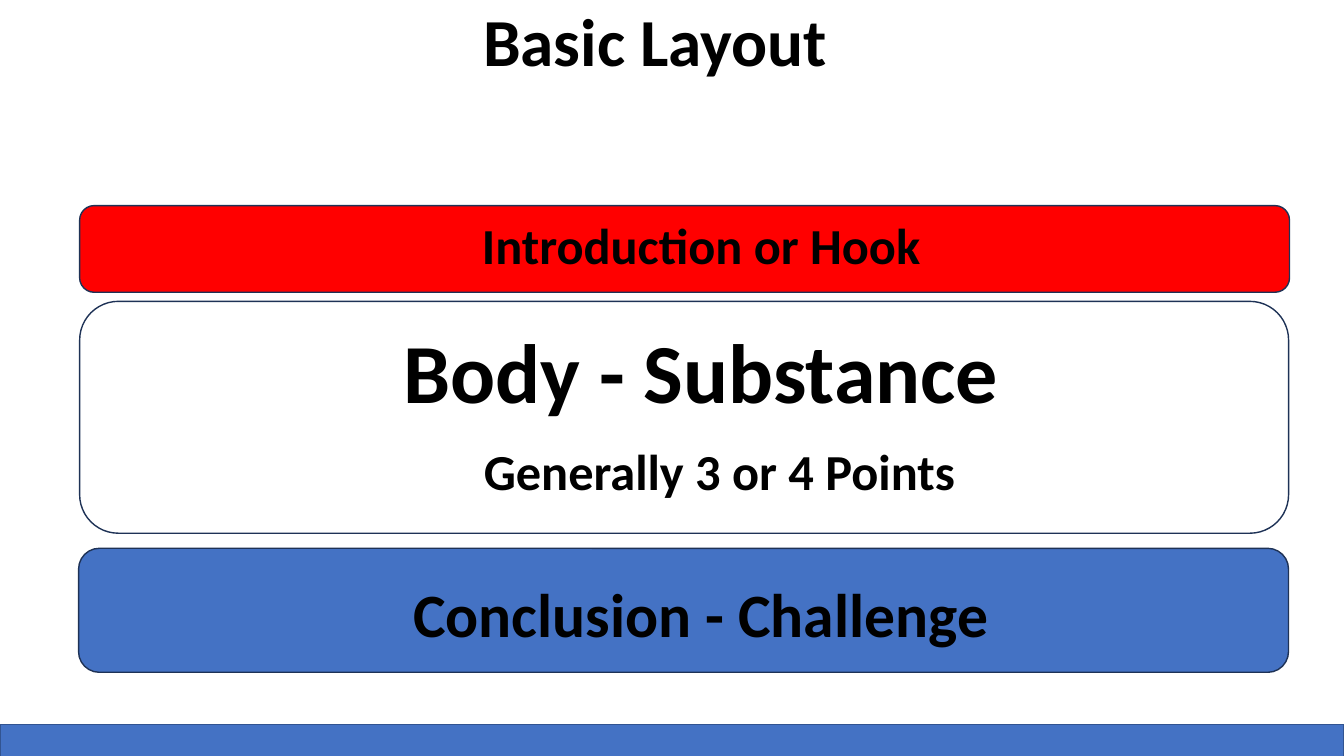
from dataclasses import dataclass

import pptx
import pptx.dml.color
import pptx.enum.shapes
import pptx.enum.text
import pptx.util

PX = 9144
FONT = "Calibri"
COLORS = {
    "red": "FF0000",
    "blue": "4472C4",
    "navy": "1E3256",
    "edge": "325491",
    "black": "000000",
}
KIND = pptx.enum.shapes.MSO_SHAPE
ALIGN = pptx.enum.text.PP_ALIGN


@dataclass(frozen=True)
class Panel:
    left: int
    top: int
    width: int
    height: int
    fill: str | None
    line: str = "navy"
    kind: KIND = KIND.ROUNDED_RECTANGLE


@dataclass(frozen=True)
class Label:
    left: int
    top: int
    width: int
    height: int
    text: str
    size: int
    align: ALIGN = ALIGN.CENTER


ITEMS: list[Panel | Label] = [
    Panel(0, 719, 1333, 57, "blue", "edge", KIND.RECTANGLE),
    Label(243, -6, 814, 121, "Basic Layout", 48),
    Panel(79, 204, 1200, 86, "red"),
    Label(133, 207, 1125, 71, "Introduction or Hook", 36),
    Label(292, 312, 806, 111, "Body - Substance", 60),
    Panel(78, 544, 1200, 123, "blue"),
    Label(274, 566, 843, 84, "Conclusion - Challenge", 44),
    Panel(79, 299, 1199, 230, None),
    Label(470, 432, 540, 71, "Generally 3 or 4 Points", 36, ALIGN.LEFT),
]


def color(name: str) -> pptx.dml.color.RGBColor:
    return pptx.dml.color.RGBColor.from_string(COLORS[name])


def bounds(item: Panel | Label) -> list[int]:
    return [n * PX for n in (item.left, item.top, item.width, item.height)]


def apply(target: object, values: dict[str, object]) -> None:
    for key, value in values.items():
        setattr(target, key, value)


def draw_panel(slide: pptx.slide.Slide, panel: Panel) -> None:
    shape = slide.shapes.add_shape(panel.kind, *bounds(panel))
    shape.shadow.inherit = False
    if panel.fill:
        shape.fill.solid()
        shape.fill.fore_color.rgb = color(panel.fill)
    else:
        shape.fill.background()
    shape.line.color.rgb = color(panel.line)
    shape.line.width = pptx.util.Pt(1)


def draw_label(slide: pptx.slide.Slide, label: Label) -> None:
    frame = slide.shapes.add_textbox(*bounds(label)).text_frame
    apply(frame, {
        "word_wrap": True,
        "auto_size": pptx.enum.text.MSO_AUTO_SIZE.SHAPE_TO_FIT_TEXT,
    })
    para = frame.paragraphs[0]
    para.alignment = label.align
    run = para.add_run()
    run.text = label.text
    apply(run.font, {
        "name": FONT,
        "size": pptx.util.Pt(label.size),
        "bold": True,
    })
    run.font.color.rgb = color("black")


def main() -> None:
    deck = pptx.Presentation()
    apply(deck, {"slide_width": 1333 * PX, "slide_height": 750 * PX})
    slide = deck.slides.add_slide(deck.slide_layouts[6])
    for item in ITEMS:
        if isinstance(item, Panel):
            draw_panel(slide, item)
        else:
            draw_label(slide, item)
    deck.save("out.pptx")


if __name__ == "__main__":
    main()
